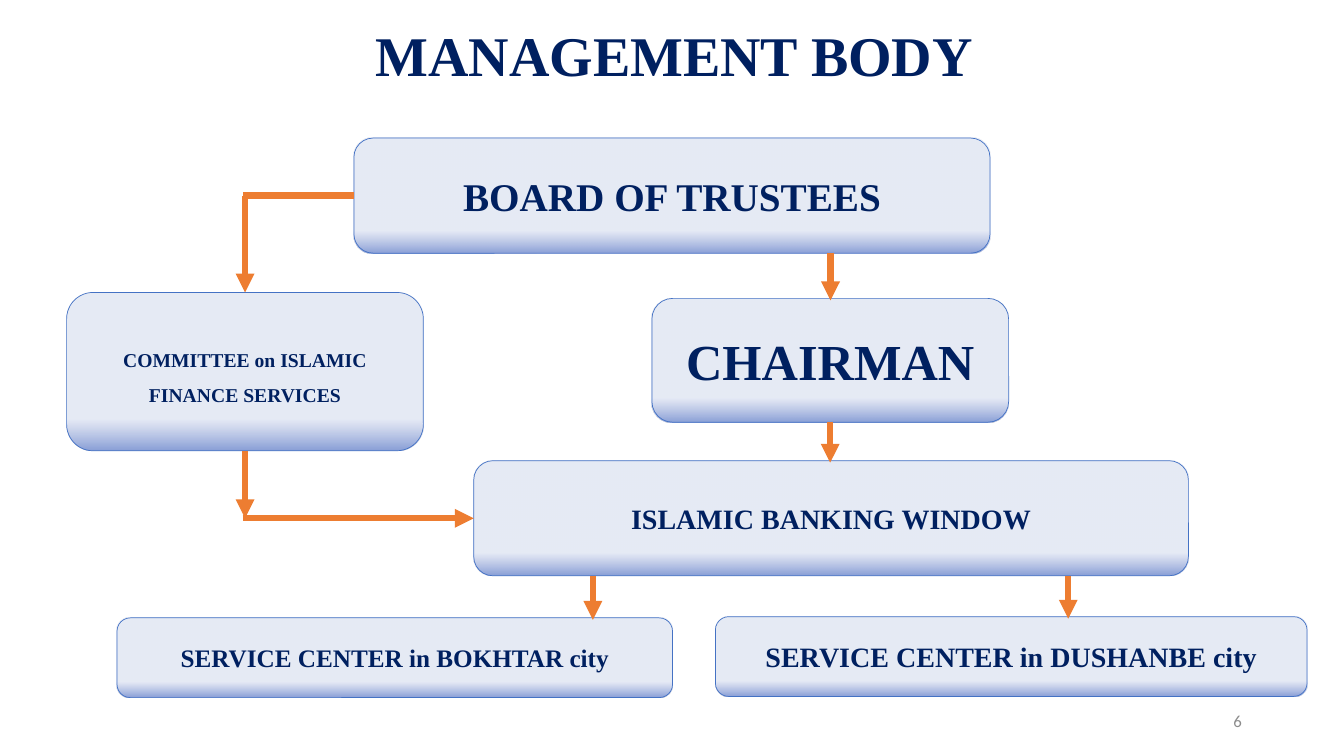
import pptx
import pptx.util
import pptx.dml.color
import pptx.enum.shapes
import pptx.enum.text
from lxml import etree
from pptx.oxml.ns import qn

Cm, Pt = pptx.util.Cm, pptx.util.Pt
ALIGN = pptx.enum.text.PP_ALIGN

COLORS = {"navy": "002060", "orange": "ED7D31", "outline": "4472C4",
          "pale": "9AABD9", "blue": "889ED7", "grey": "8C8C8C"}
SERIF = "Times New Roman"

TITLE = ("MANAGEMENT BODY", (2.95, 0.56, 28.09, 1.8), 40)
PAGE = ("6", (23.93, 17.65, 7.62, 1.02), 12)
BOXES = {
    "board": ("BOARD OF TRUSTEES", (8.92, 3.48, 16.03, 2.9), 28, None),
    "committee": ("COMMITTEE on ISLAMIC FINANCE SERVICES", (1.68, 7.37, 8.99, 3.99), 14, 1.5),
    "chairman": ("CHAIRMAN", (16.43, 7.52, 8.99, 3.12), 36, None),
    "window": ("ISLAMIC BANKING WINDOW", (11.94, 11.61, 18.01, 2.9), 20, None),
    "bokhtar": ("SERVICE CENTER in BOKHTAR city", (2.95, 15.57, 14, 2.01), 18, None),
    "dushanbe": ("SERVICE CENTER in DUSHANBE city", (18.03, 15.54, 14.91, 2.01), 20, None),
}
DOWN_ARROWS = [("board", "chairman", 20.93), ("chairman", "window", 20.92),
               ("window", "bokhtar", 14.94), ("window", "dushanbe", 26.92)]
CORNER_OVERLAP = 0.06


def rgb(name):
    return pptx.dml.color.RGBColor.from_string(COLORS[name])


def write(sp, text, size, font, color, bold, align, spacing=None):
    tf = sp.text_frame
    tf.word_wrap = True
    tf.vertical_anchor = pptx.enum.text.MSO_ANCHOR.MIDDLE
    p = tf.paragraphs[0]
    p.alignment = align
    if spacing:
        p.line_spacing = spacing
    r = p.add_run()
    r.text = text
    r.font.size, r.font.name, r.font.bold = Pt(size), font, bold
    r.font.color.rgb = rgb(color)


def add_label(s, label, font, color, bold, align, spacing=None):
    text, place, size = label
    sp = s.shapes.add_textbox(*map(Cm, place))
    write(sp, text, size, font, color, bold, align, spacing)


def add_box(s, text, place, size, spacing):
    sp = s.shapes.add_shape(pptx.enum.shapes.MSO_SHAPE.ROUNDED_RECTANGLE, *map(Cm, place))
    sp.shadow.inherit = False
    sp.fill.gradient()
    sp.fill.gradient_angle = 270
    stops = sp.fill.gradient_stops
    for stop, position, color in zip(stops, (0.8, 1), ("pale", "blue")):
        stop.position = position
        stop.color.rgb = rgb(color)
    pale = next(sp._element.spPr.iter(qn("a:srgbClr")))
    etree.SubElement(pale, qn("a:alpha"), val="25000")
    sp.line.color.rgb = rgb("outline")
    sp.line.width = Pt(0.5)
    write(sp, text, size, SERIF, "navy", True, ALIGN.CENTER, spacing)


def add_line(s, start, end, arrow=True):
    c = s.shapes.add_connector(pptx.enum.shapes.MSO_CONNECTOR.STRAIGHT, *map(Cm, start + end))
    c.line.color.rgb = rgb("orange")
    c.line.width = Pt(4.5)
    if arrow:
        etree.SubElement(c.line._get_or_add_ln(), qn("a:tailEnd"), type="triangle")
    etree.SubElement(c._element.spPr, qn("a:effectLst"))


def edges(name):
    left, top, width, height = BOXES[name][1]
    return {"left": left, "top": top, "bottom": top + height,
            "x": left + width / 2, "y": top + height / 2}


def main():
    prs = pptx.Presentation()
    prs.slide_width, prs.slide_height = Cm(33.87), Cm(19.05)
    s = prs.slides.add_slide(prs.slide_layouts[6])

    add_label(s, TITLE, SERIF, "navy", True, ALIGN.CENTER, 0.9)
    for box in BOXES.values():
        add_box(s, *box)
    add_label(s, PAGE, "Calibri", "grey", False, ALIGN.RIGHT)

    for upper, lower, x in DOWN_ARROWS:
        add_line(s, (x, edges(upper)["bottom"]), (x, edges(lower)["top"] + 0.05))

    board, committee, window = map(edges, ("board", "committee", "window"))
    x, corner = committee["x"], committee["x"] - CORNER_OVERLAP
    add_line(s, (board["left"], board["y"]), (corner, board["y"]), arrow=False)
    add_line(s, (x, board["y"]), (x, committee["top"]))
    add_line(s, (x, committee["bottom"]), (x, window["y"]))
    add_line(s, (corner, window["y"]), (window["left"], window["y"]))

    prs.save("out.pptx")


if __name__ == "__main__":
    main()
